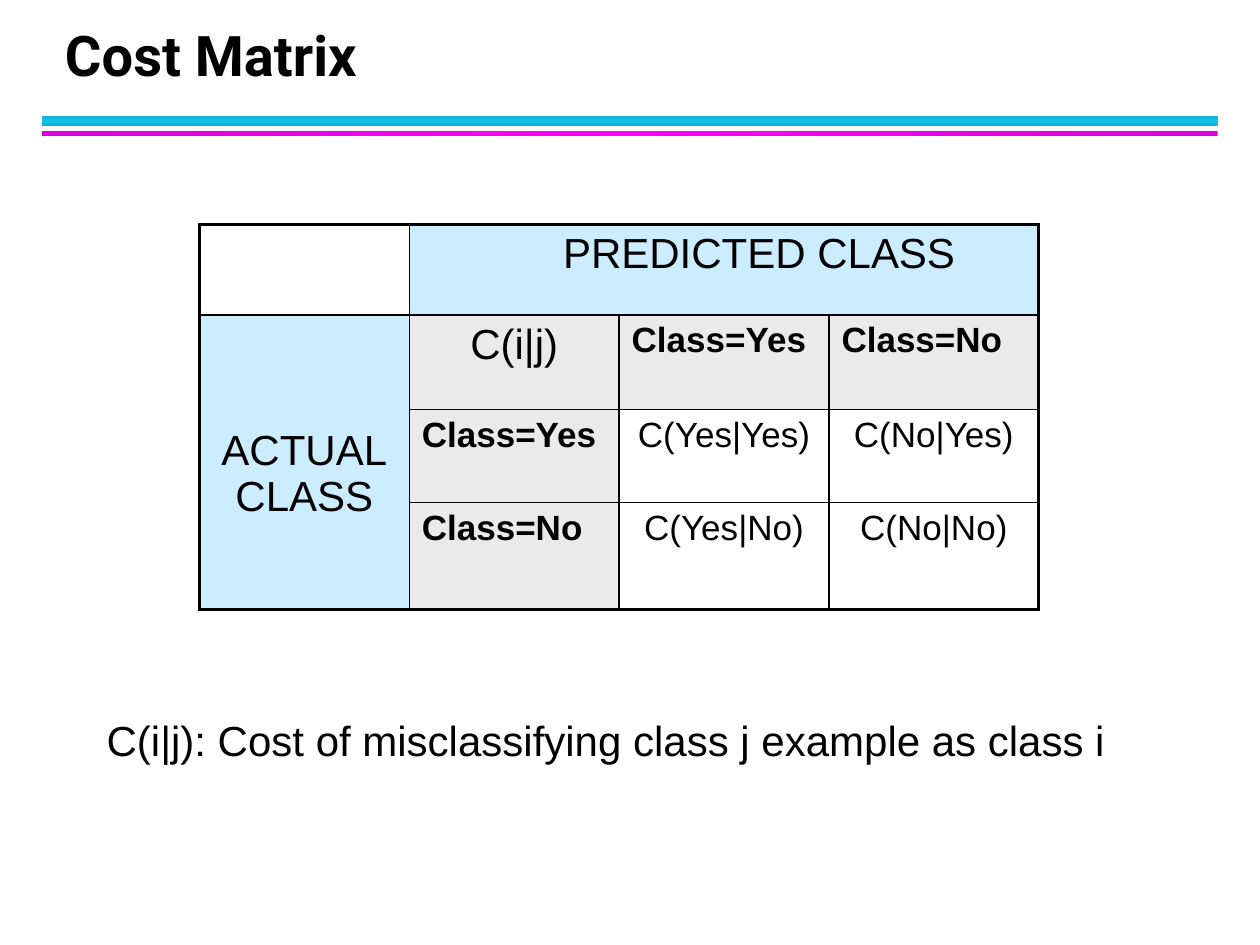
import copy

import pptx
import pptx.dml.color
import pptx.enum.shapes
import pptx.enum.text
import pptx.oxml.ns
import pptx.util
from lxml import etree

Cm, Pt = pptx.util.Cm, pptx.util.Pt
qn = pptx.oxml.ns.qn
ALIGN, ANCHOR = pptx.enum.text.PP_ALIGN, pptx.enum.text.MSO_ANCHOR

COLORS = {
    "text": "000000", "border": "000000", "header": "CCECFF", "label": "EAEAEA",
    "cyan": "12C2E9", "cyan_edge": "10B0D3",
    "magenta": "FF00FF", "magenta_edge": "DA00DA",
}
TITLE = {"name": "Roboto", "size": Pt(32), "bold": True}
LARGE = {"name": "Arial", "size": Pt(24), "bold": False}
VALUE = {"name": "Arial", "size": Pt(20), "bold": False}
LABEL = {"name": "Arial", "size": Pt(20), "bold": True}

# row, column, text, font, alignment, fill
CELLS = [
    (0, 0, "", LARGE, ALIGN.LEFT, None),
    (0, 1, "PREDICTED CLASS", LARGE, ALIGN.CENTER, "header"),
    (1, 0, "ACTUAL\vCLASS", LARGE, ALIGN.CENTER, "header"),
    (1, 1, "C(i|j)", LARGE, ALIGN.CENTER, "label"),
    (1, 2, "Class=Yes", LABEL, ALIGN.LEFT, "label"),
    (1, 3, "Class=No", LABEL, ALIGN.LEFT, "label"),
    (2, 1, "Class=Yes", LABEL, ALIGN.LEFT, "label"),
    (2, 2, "C(Yes|Yes)", VALUE, ALIGN.CENTER, None),
    (2, 3, "C(No|Yes)", VALUE, ALIGN.CENTER, None),
    (3, 1, "Class=No", LABEL, ALIGN.LEFT, "label"),
    (3, 2, "C(Yes|No)", VALUE, ALIGN.CENTER, None),
    (3, 3, "C(No|No)", VALUE, ALIGN.CENTER, None),
]
ROW_HEIGHTS = [1.83, 1.9, 1.88, 2.16]
COLUMN_WIDTH = 4.23


def rgb(name):
    return pptx.dml.color.RGBColor.from_string(COLORS[name])


def write(tf, text, font, align=ALIGN.LEFT):
    p = tf.paragraphs[0]
    p.text = text
    p.alignment = align
    for r in p.runs:
        for key, value in font.items():
            setattr(r.font, key, value)
        r.font.color.rgb = rgb("text")
    return p


def add_text(s, box, text, font, anchor):
    tf = s.shapes.add_textbox(*map(Cm, box)).text_frame
    tf.word_wrap = True
    tf.vertical_anchor = anchor
    return write(tf, text, font)


def add_bar(s, top, height, color, angle):
    """Draw a rule whose gradient is lightest in the middle."""
    rect = pptx.enum.shapes.MSO_SHAPE.RECTANGLE
    sp = s.shapes.add_shape(rect, Cm(0.85), Cm(top), Cm(23.7), Cm(height))
    sp.shadow.inherit = False
    sp.line.fill.background()
    sp.fill.gradient()
    sp.fill.gradient_angle = angle
    stops = next(sp._element.spPr.iter(qn("a:gsLst")))
    stops.append(copy.deepcopy(stops[0]))
    edge = color + "_edge"
    for i, name in enumerate([edge, color, edge]):
        stop = sp.fill.gradient_stops[i]
        stop.position = i / 2
        stop.color.rgb = rgb(name)


def set_borders(cell, outer):
    """Give the cell thick lines on its outer sides and thin ones elsewhere."""
    tcPr = cell._tc.get_or_add_tcPr()
    for side in "LRTB":
        width = Pt(2.25 if side in outer else 1)
        ln = etree.SubElement(tcPr, qn("a:ln" + side), w=str(width))
        fill = etree.SubElement(ln, qn("a:solidFill"))
        etree.SubElement(fill, qn("a:srgbClr"), val=COLORS["border"])


def add_matrix(s):
    n = len(ROW_HEIGHTS)
    frame = s.shapes.add_table(n, n, Cm(4.02), Cm(4.52),
                               Cm(n * COLUMN_WIDTH), Cm(sum(ROW_HEIGHTS)))
    table = frame.table
    table.first_row = table.horz_banding = False
    for column in table.columns:
        column.width = Cm(COLUMN_WIDTH)
    for row, height in zip(table.rows, ROW_HEIGHTS):
        row.height = Cm(height)
    table.cell(0, 1).merge(table.cell(0, 3))
    table.cell(1, 0).merge(table.cell(3, 0))

    for row, col, text, font, align, fill in CELLS:
        cell = table.cell(row, col)
        edges = {"L": col == 0, "R": col + cell.span_width in (n, n + 1),
                 "T": row == 0, "B": row + cell.span_height in (n, n + 1)}
        if not cell.is_merge_origin:
            edges.update(R=col == n - 1, B=row == n - 1)
        set_borders(cell, [side for side, outer in edges.items() if outer])
        if fill:
            cell.fill.solid()
            cell.fill.fore_color.rgb = rgb(fill)
        else:
            cell.fill.background()
        write(cell.text_frame, text, font, align)
    table.cell(0, 1).margin_left = Cm(1.67)
    table.cell(1, 0).margin_top = Cm(2.26)


def main():
    prs = pptx.Presentation()
    prs.slide_width, prs.slide_height = Cm(25.4), Cm(19.05)
    s = prs.slides.add_slide(prs.slide_layouts[6])
    add_bar(s, 2.33, 0.21, "cyan", 90)
    add_bar(s, 2.65, 0.1, "magenta", 0)
    title = add_text(s, (1.06, 0.42, 23, 1.48), "Cost Matrix", TITLE, ANCHOR.BOTTOM)
    title.line_spacing = Pt(36)
    add_matrix(s)
    add_text(s, (1.9, 14.27, 21.8, 2.54),
             "C(i|j): Cost of misclassifying class j example as class i",
             LARGE, ANCHOR.TOP)
    prs.save("out.pptx")


if __name__ == "__main__":
    main()
